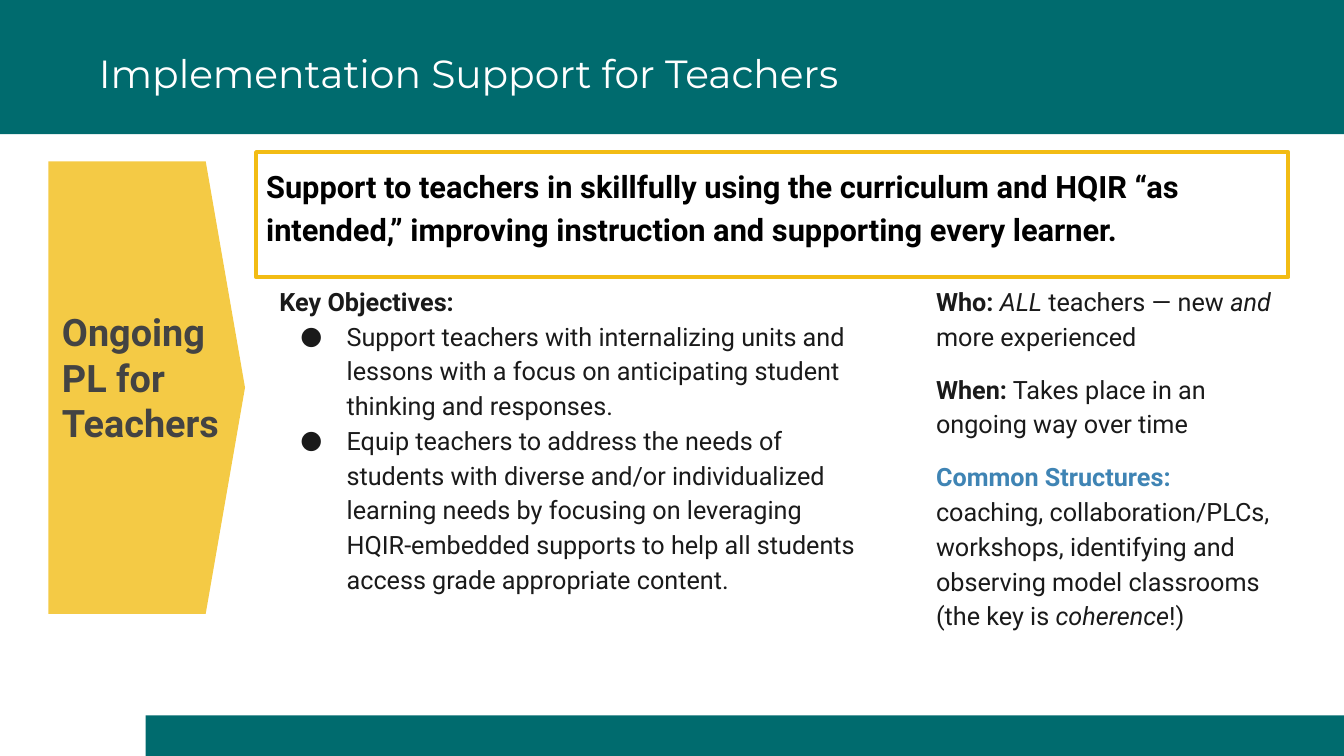
from lxml import etree
from pptx import Presentation
from pptx.dml.color import RGBColor
from pptx.enum.shapes import MSO_SHAPE
from pptx.enum.text import MSO_ANCHOR, MSO_AUTO_SIZE, PP_ALIGN
from pptx.oxml.ns import qn
from pptx.util import Pt

RECTANGLE = MSO_SHAPE.RECTANGLE
OFFPAGE = MSO_SHAPE.FLOWCHART_OFFPAGE_CONNECTOR
TOP, MIDDLE = MSO_ANCHOR.TOP, MSO_ANCHOR.MIDDLE
NO_AUTOFIT = MSO_AUTO_SIZE.NONE
LEFT = PP_ALIGN.LEFT

TEAL, GOLD, BLUE = "006B6E", "F2BC14", "3F84B4"
WHITE, BLACK, INK, GREY = "FFFFFF", "000000", "1A1A1A", "434343"


def color(hex_string):
    return RGBColor.from_string(hex_string)


class SlideBuilder:
    """Holds the text style and the current slide."""
    font = "Roboto"
    title_font = "Montserrat"
    line_spacing = 1.15

    def __init__(self, slide):
        self.slide = slide

    def shape(self, kind, box, fill=None, line=None, alpha=None, rotation=0):
        shape = self.slide.shapes.add_shape(kind, *map(Pt, box))
        shape.shadow.inherit = False
        shape.rotation = rotation
        if fill:
            shape.fill.solid()
            shape.fill.fore_color.rgb = color(fill)
        else:
            shape.fill.background()
        if line:
            shape.line.color.rgb = color(line)
            shape.line.width = Pt(3)
        else:
            shape.line.fill.background()
        if alpha:
            rgb = shape.fill._xPr.find(".//" + qn("a:srgbClr"))
            etree.SubElement(rgb, qn("a:alpha"), val=str(alpha * 1000))
        return shape

    def text_box(self, box):
        return self.slide.shapes.add_textbox(*map(Pt, box))

    def placeholder(self, index, box):
        shape = self.slide.placeholders[index]
        shape.left, shape.top, shape.width, shape.height = map(Pt, box)
        shape.element.getparent().append(shape.element)  # bring to front
        return shape

    def frame(self, shape, inset, anchor=TOP):
        frame = shape.text_frame
        frame.word_wrap = True
        frame.auto_size = NO_AUTOFIT
        frame.vertical_anchor = anchor
        frame.margin_left = frame.margin_right = Pt(inset)
        frame.margin_top = frame.margin_bottom = Pt(inset)
        return frame

    def paragraph(self, frame, runs, size, spacing=line_spacing, before=0,
                  after=0, bullet=False, font=font):
        """Each run is (text, colour, style); style may hold b and i."""
        paragraph = frame.paragraphs[0]
        if paragraph.runs:
            paragraph = frame.add_paragraph()
        paragraph.alignment = LEFT
        paragraph.line_spacing = spacing
        paragraph.space_before, paragraph.space_after = Pt(before), Pt(after)
        self.bullet(paragraph, bullet)
        for text, run_color, style in runs:
            run = paragraph.add_run()
            run.text = text
            run.font.name, run.font.size = font, Pt(size)
            run.font.color.rgb = color(run_color)
            run.font.bold, run.font.italic = "b" in style, "i" in style

    def bullet(self, paragraph, shown):
        properties = paragraph._p.get_or_add_pPr()
        margin, indent = (Pt(48), Pt(-33)) if shown else (0, 0)
        properties.set("marL", str(margin))
        properties.set("indent", str(indent))
        if shown:
            bullet_color = etree.SubElement(properties, qn("a:buClr"))
            etree.SubElement(bullet_color, qn("a:srgbClr"), val=INK)
            etree.SubElement(properties, qn("a:buFont"), typeface=self.font)
            etree.SubElement(properties, qn("a:buChar"), char="●")
        else:
            etree.SubElement(properties, qn("a:buNone"))


def main():
    presentation = Presentation()
    presentation.slide_width, presentation.slide_height = Pt(960), Pt(540)
    two_content = presentation.slide_layouts[3]
    builder = SlideBuilder(presentation.slides.add_slide(two_content))

    # Header and footer bars
    builder.shape(RECTANGLE, (0, 0, 960, 95.8), TEAL)
    builder.shape(RECTANGLE, (104, 511, 856, 29), TEAL)

    # Title
    title = builder.frame(builder.placeholder(0, (63.4, 8, 881, 88)), 7.2, MIDDLE)
    builder.paragraph(title, [("Implementation Support for Teachers", WHITE, "")],
                      28, spacing=1, font=builder.title_font)

    # Key objectives
    objectives = builder.frame(builder.placeholder(1, (190, 191.5, 438.5, 261.4)), 9.6)
    builder.paragraph(objectives, [("Key Objectives:", INK, "b")], 18)
    for objective in (
        "Support teachers with internalizing units and lessons with a focus on "
        "anticipating student thinking and responses.",
        "Equip teachers to address the needs of students with diverse and/or "
        "individualized learning needs by focusing on leveraging HQIR-embedded "
        "supports to help all students access grade appropriate content.",
    ):
        builder.paragraph(objectives, [(objective, INK, "")], 18, bullet=True)

    # Who, when and common structures
    details = builder.frame(builder.placeholder(2, (659, 191.5, 261.4, 261.4)), 9.6)
    builder.paragraph(details, [
        ("Who: ", INK, "b"), ("ALL ", INK, "i"), ("teachers — new ", INK, ""),
        ("and", INK, "i"), (" more experienced", INK, "")], 18)
    builder.paragraph(details, [
        ("When:", INK, "b"),
        (" Takes place in an ongoing way over time", INK, "")], 18, before=13)
    builder.paragraph(details, [
        ("Common Structures: ", BLUE, "b"),
        ("coaching, collaboration/PLCs, workshops, identifying and observing "
         "model classrooms (the key is ", INK, ""),
        ("coherence", INK, "i"), ("!)", INK, "")], 18, before=13, after=13)

    # Pointer with its label
    builder.shape(OFFPAGE, (-56.8, 206.6, 323.2, 140.4), GOLD, alpha=79, rotation=270)
    label = builder.frame(builder.text_box((34.6, 211, 140.4, 117.4)), 9.6)
    builder.paragraph(label, [("Ongoing PL for Teachers", GREY, "b")], 27, spacing=1)

    # Framed summary
    summary_box = builder.shape(RECTANGLE, (183, 108.7, 737.2, 89.3), line=GOLD)
    summary = builder.frame(summary_box, 7.2)
    builder.paragraph(summary, [(
        "Support to teachers in skillfully using the curriculum and HQIR “as "
        "intended,” improving instruction and supporting every learner.",
        BLACK, "b")], 22, after=13)

    presentation.save("out.pptx")


if __name__ == "__main__":
    main()
